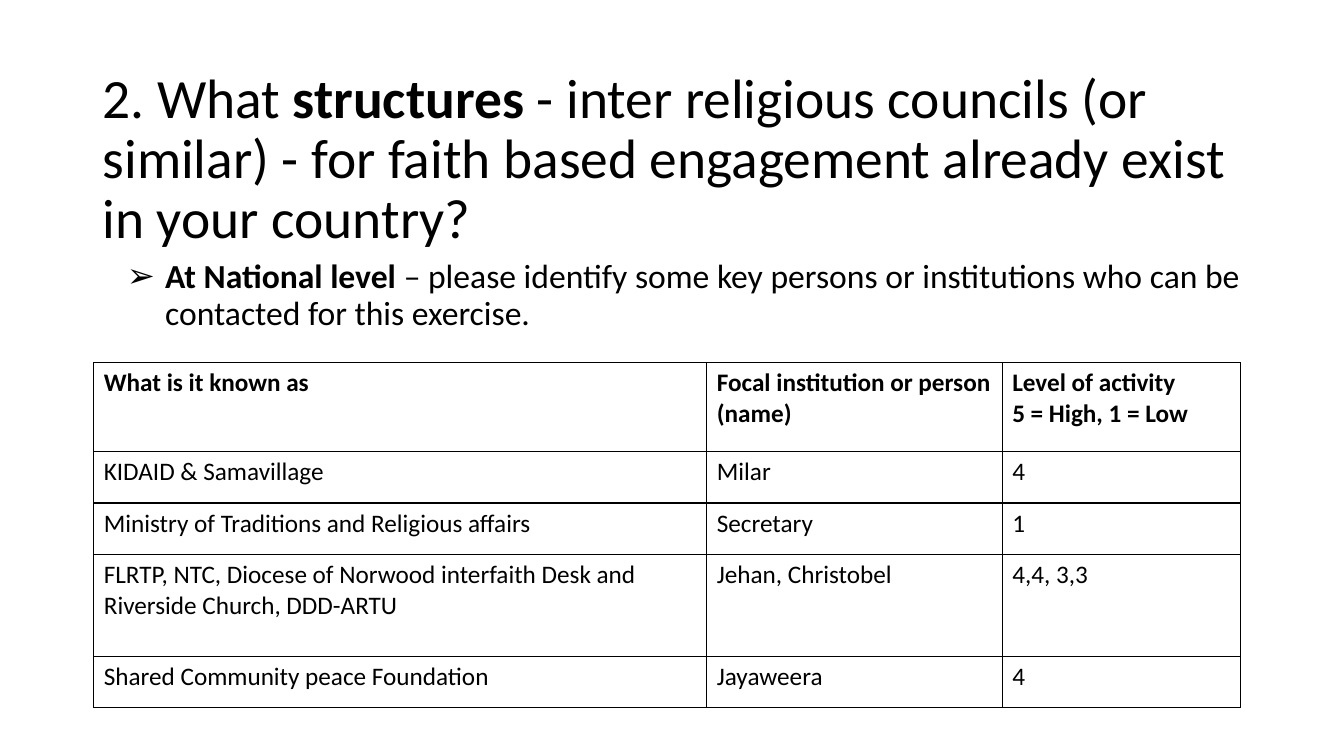
from dataclasses import dataclass

from lxml.etree import SubElement
from pptx import Presentation
from pptx.dml.color import RGBColor
from pptx.enum.text import MSO_ANCHOR
from pptx.oxml.ns import qn
from pptx.util import Inches, Pt


@dataclass(frozen=True)
class Theme:
    """Colours, font and type sizes of the slide."""
    font: str = "Calibri"
    ink: str = "000000"
    title: float = 39.6
    prompt: float = 24
    table: float = 18
    border: float = 1
    line_spacing: float = 0.9


THEME = Theme()
COLUMN_WIDTHS = (6.08, 2.93, 2.36)
ROW_HEIGHTS = (0.88, 0.51, 0.51, 1.01, 0.51)
COUNCILS = (
    ("What is it known as", "Focal institution or person (name)",
     "Level of activity\n5 = High, 1 = Low"),
    ("KIDAID & Samavillage", "Milar", "4"),
    ("Ministry of Traditions and Religious affairs", "Secretary", "1"),
    ("FLRTP, NTC, Diocese of Norwood interfaith Desk and Riverside Church, DDD-ARTU",
     "Jehan, Christobel", "4,4, 3,3"),
    ("Shared Community peace Foundation", "Jayaweera", "4"),
)


def add_run(paragraph, text, size, bold=False):
    """Append one styled run to a paragraph."""
    run = paragraph.add_run()
    run.text = text
    run.font.name = THEME.font
    run.font.size = Pt(size)
    run.font.bold = bold
    run.font.color.rgb = RGBColor.from_string(THEME.ink)


def add_text(slide, box, parts, size, anchor=MSO_ANCHOR.TOP):
    """Place a one-paragraph text box and return its paragraph."""
    frame = slide.shapes.add_textbox(*map(Inches, box)).text_frame
    frame.word_wrap = True
    frame.vertical_anchor = anchor
    paragraph = frame.paragraphs[0]
    paragraph.line_spacing = THEME.line_spacing
    for text, bold in parts:
        add_run(paragraph, text, size, bold)
    return paragraph


def add_question(slide, box):
    """Place the question that heads the slide."""
    parts = (("2. What ", False), ("structures", True),
             (" - inter religious councils (or similar) - for faith based "
              "engagement already exist in your country?", False))
    add_text(slide, box, parts, THEME.title, MSO_ANCHOR.MIDDLE)


def add_prompt(slide, box):
    """Place the bulleted prompt with a hanging indent."""
    parts = (("At National level", True),
             (" – please identify some key persons or institutions who can be "
              "contacted for this exercise.", False))
    prompt = add_text(slide, box, parts, THEME.prompt)
    prompt.space_before = Pt(5)
    properties = prompt._p.get_or_add_pPr()
    properties.set("marL", str(Inches(0.62)))
    properties.set("indent", str(Inches(-0.38)))
    SubElement(properties, qn("a:buFont"), typeface=THEME.font)
    SubElement(properties, qn("a:buChar"), char="➢")


def add_borders(cell):
    """Draw a thin line on all four sides of a cell."""
    properties = cell._tc.get_or_add_tcPr()
    for position, side in enumerate(("a:lnL", "a:lnR", "a:lnT", "a:lnB")):
        line = SubElement(properties, qn(side), w=str(Pt(THEME.border)))
        properties.insert(position, line)
        fill = SubElement(line, qn("a:solidFill"))
        SubElement(fill, qn("a:srgbClr"), val=THEME.ink)


def add_councils(slide, left, top):
    """Place the table of councils at the given corner."""
    table = slide.shapes.add_table(
        len(ROW_HEIGHTS), len(COLUMN_WIDTHS), Inches(left), Inches(top),
        Inches(sum(COLUMN_WIDTHS)), Inches(sum(ROW_HEIGHTS))).table
    table.first_row = True
    table.horz_banding = False
    for column, width in zip(table.columns, COLUMN_WIDTHS):
        column.width = Inches(width)
    for row, height, entries in zip(table.rows, ROW_HEIGHTS, COUNCILS):
        row.height = Inches(height)
        for cell, entry in zip(row.cells, entries):
            cell.fill.background()
            add_borders(cell)
            for index, line in enumerate(entry.split("\n")):
                frame = cell.text_frame
                paragraph = frame.add_paragraph() if index else frame.paragraphs[0]
                add_run(paragraph, line, THEME.table, entries is COUNCILS[0])


def main():
    """Build and save the slide."""
    deck = Presentation()
    deck.slide_width, deck.slide_height = Inches(13.33), Inches(7.5)
    slide = deck.slides.add_slide(deck.slide_layouts[6])
    add_question(slide, (0.92, 0.87, 11.5, 1.45))
    add_prompt(slide, (0.92, 2.53, 11.5, 0.86))
    add_councils(slide, 0.93, 3.6)
    deck.save("out.pptx")


if __name__ == "__main__":
    main()
